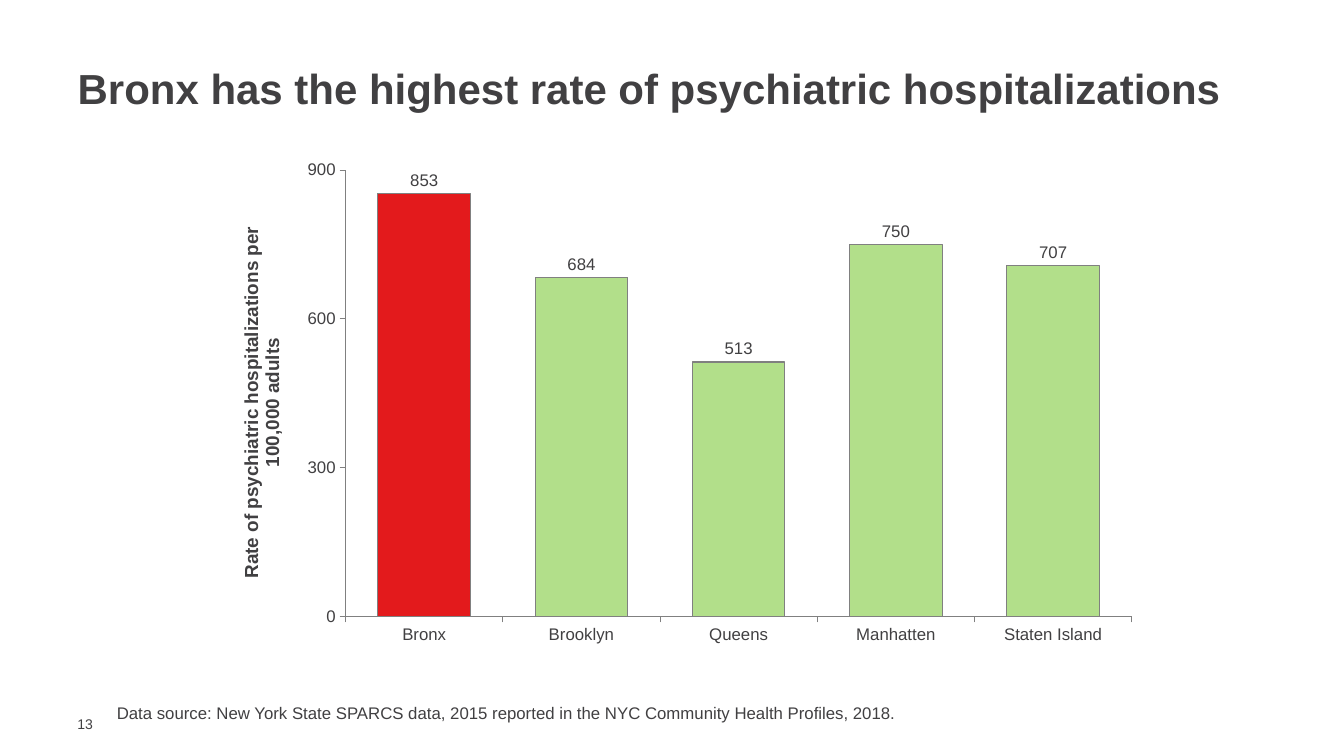
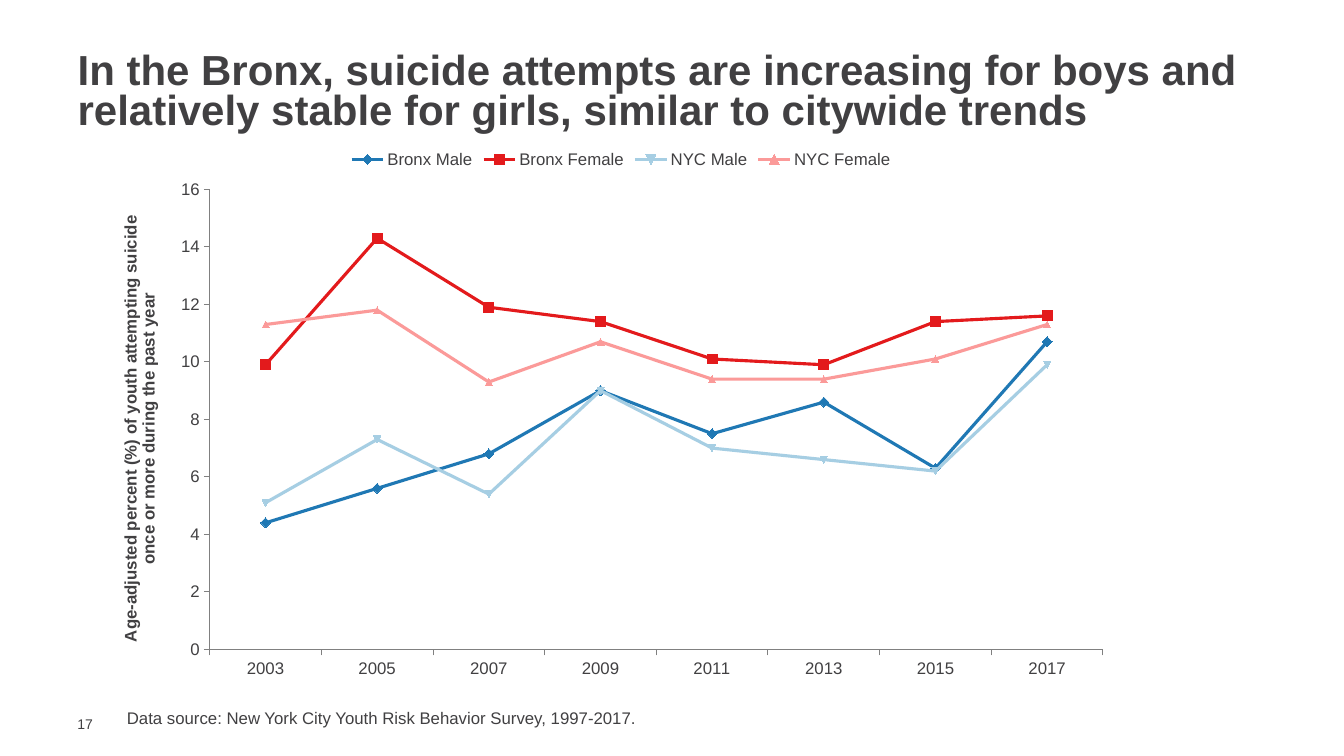
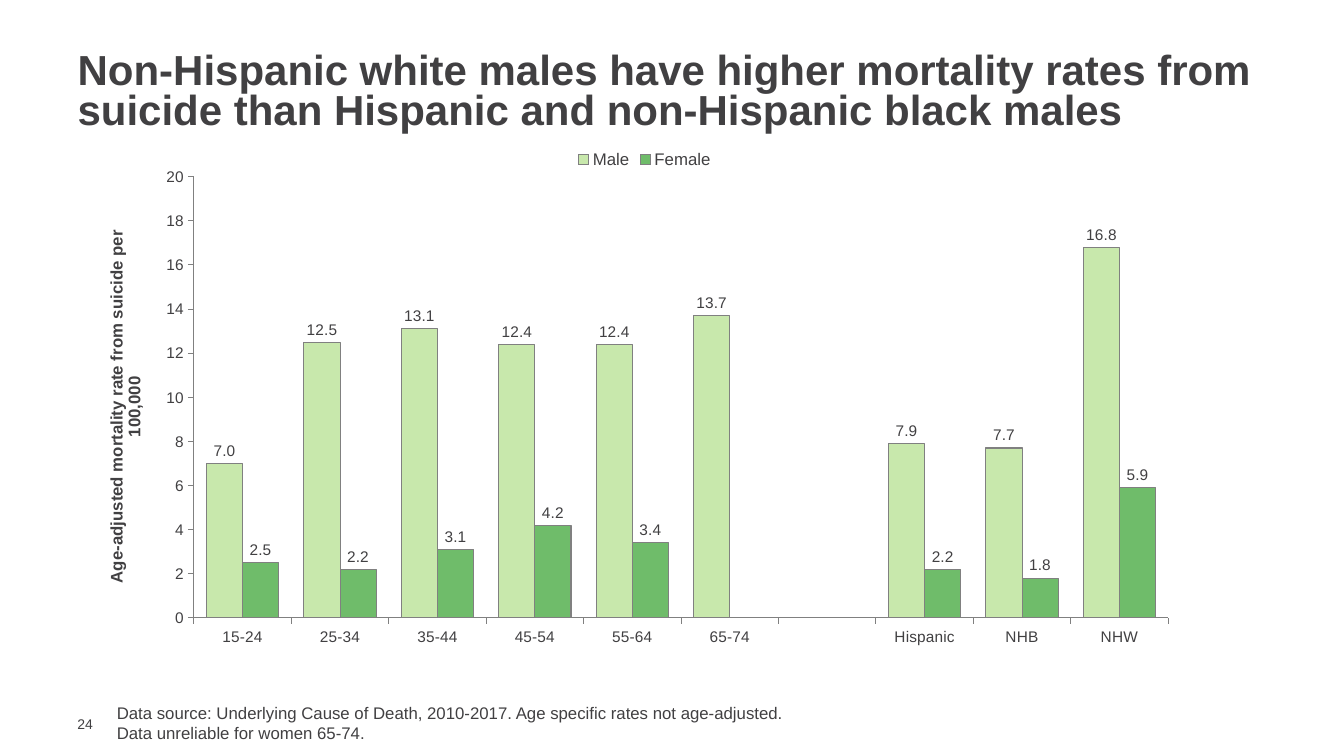
import pptx
import pptx.util
import pptx.chart.data
import pptx.dml.color
import pptx.enum.chart
import pptx.enum.text
import pptx.oxml
from pptx.util import Inches

RGB = pptx.dml.color.RGBColor
KIND = pptx.enum.chart.XL_CHART_TYPE
MARK = pptx.enum.chart.XL_MARKER_STYLE
FONT = "Arial"
INK = RGB(0x41, 0x40, 0x42)
GRAY = RGB(0x80, 0x80, 0x80)
RED = RGB(0xE3, 0x1A, 0x1C)
PINK = RGB(0xFB, 0x9A, 0x99)
BLUE = RGB(0x1F, 0x78, 0xB4)
SKY = RGB(0xA6, 0xCE, 0xE3)
LIME = RGB(0xB2, 0xDF, 0x8A)
GREEN = RGB(0x33, 0xA0, 0x2C)

# Content: series are (name, values, colour), lines add (marker, size)
SLIDES = [
    dict(
        title="Bronx has the highest rate of psychiatric hospitalizations",
        head=(0.67, 0.67, 12, 0.5), page="13",
        note=["Data source: New York State SPARCS data, 2015 reported in the "
              "NYC Community Health Profiles, 2018."],
        foot=(1.06, 6.92, 9.92, 0.3),
        kind=KIND.COLUMN_CLUSTERED, at=(2.16, 1.5, 9.25, 4.99),
        axis="Rate of psychiatric hospitalizations per 100,000 adults",
        size=13.5, tick=12, top=900, step=300, form="General",
        cats=["Bronx", "Brooklyn", "Queens", "Manhatten", "Staten Island"],
        series=[("Series 1", [853, 684, 513, 750, 707], LIME)],
        points={0: RED},
    ),
    dict(
        title="In the Bronx, suicide attempts are increasing for boys and "
              "relatively stable for girls, similar to citywide trends",
        head=(0.67, 0.47, 12, 0.91), page="17",
        note=["Data source: New York City Youth Risk Behavior Survey, 1997-2017."],
        foot=(1.16, 6.97, 9.71, 0.3),
        kind=KIND.LINE_MARKERS, at=(1.16, 1.38, 10, 5.37),
        plot=(0.092, 0.093, 0.886, 0.85),
        axis="Age-adjusted percent (%) of youth attempting suicide "
             "once or more during the past year",
        size=12, tick=12, top=16, step=2,
        cats=["2003", "2005", "2007", "2009", "2011", "2013", "2015", "2017"],
        series=[
            ("Bronx Male", [4.4, 5.6, 6.8, 9, 7.5, 8.6, 6.3, 10.7],
             BLUE, MARK.DIAMOND, 7),
            ("Bronx Female", [9.9, 14.3, 11.9, 11.4, 10.1, 9.9, 11.4, 11.6],
             RED, MARK.SQUARE, 7),
            ("NYC Male", [5.1, 7.3, 5.4, 9, 7, 6.6, 6.2, 9.9],
             SKY, MARK.AUTOMATIC, 5),
            ("NYC Female", [11.3, 11.8, 9.3, 10.7, 9.4, 9.4, 10.1, 11.3],
             PINK, MARK.AUTOMATIC, 5),
        ],
    ),
    dict(
        title="Non-Hispanic white males have higher mortality rates from "
              "suicide than Hispanic and non-Hispanic black males",
        head=(0.67, 0.47, 12, 0.91), page="24",
        note=["Data source: Underlying Cause of Death, 2010-2017. "
              "Age specific rates not age-adjusted.",
              "Data unreliable for women 65-74."],
        foot=(1.06, 6.92, 9.92, 0.5),
        kind=KIND.COLUMN_CLUSTERED, at=(1.02, 1.38, 10.75, 5.13),
        plot=(0.084, 0.073, 0.899, 0.853),
        axis="Age-adjusted mortality rate from suicide per 100,000",
        size=12, tick=11, top=20, step=2, form="0.0", alpha=70,
        cats=["15-24", "25-34", "35-44", "45-54", "55-64", "65-74", "",
              "Hispanic", "NHB", "NHW"],
        series=[
            ("Male", [7, 12.5, 13.1, 12.4, 12.4, 13.7, None, 7.9, 7.7, 16.8], LIME),
            ("Female", [2.5, 2.2, 3.1, 4.2, 3.4, None, None, 2.2, 1.8, 5.9], GREEN),
        ],
    ),
]


def style(font, size, bold=False):
    font.name, font.size, font.bold = FONT, pptx.util.Pt(size), bold
    font.color.rgb = INK


def outline(line, color, width):
    line.color.rgb = color
    line.width = pptx.util.Pt(width)


def write(frame, lines, size, bold=False):
    frame.word_wrap = True
    frame.auto_size = pptx.enum.text.MSO_AUTO_SIZE.SHAPE_TO_FIT_TEXT
    for i, text in enumerate(lines):
        para = frame.add_paragraph() if i else frame.paragraphs[0]
        para.alignment = pptx.enum.text.PP_ALIGN.LEFT
        run = para.add_run()
        run.text = text
        style(run.font, size, bold)


def add_text(slide, at, lines, size):
    frame = slide.shapes.add_textbox(*map(Inches, at)).text_frame
    write(frame, lines, size)
    return frame


def add_frame(slide, item):
    # Title, source note and page number
    title = slide.shapes.title
    title.left, title.top, title.width, title.height = map(Inches, item["head"])
    write(title.text_frame, [item["title"]], 30, True)
    title.text_frame.vertical_anchor = pptx.enum.text.MSO_ANCHOR.MIDDLE
    title.text_frame.paragraphs[0].line_spacing = 0.8
    add_text(slide, item["foot"], item["note"], 12)
    page = add_text(slide, (0.67, 7.1, 0.43, 0.17), [item["page"]], 10)
    page.vertical_anchor = pptx.enum.text.MSO_ANCHOR.MIDDLE
    page.margin_left = Inches(0.1)
    page.margin_top = page.margin_right = page.margin_bottom = 0


def set_axes(chart, item):
    for axis in (chart.category_axis, chart.value_axis):
        axis.has_major_gridlines = False
        axis.major_tick_mark = pptx.enum.chart.XL_TICK_MARK.OUTSIDE
        axis.minor_tick_mark = pptx.enum.chart.XL_TICK_MARK.NONE
        style(axis.tick_labels.font, item["tick"])
        outline(axis.format.line, GRAY, 0.75)
    axis = chart.value_axis
    axis.minimum_scale, axis.maximum_scale = 0, item["top"]
    axis.major_unit = item["step"]
    axis.tick_labels.number_format = "General"
    axis.tick_labels.number_format_is_linked = False
    run = axis.axis_title.text_frame.paragraphs[0].add_run()
    run.text = item["axis"]
    style(run.font, item["size"], True)


def set_line(series, color, mark, size):
    series.smooth = False
    outline(series.format.line, color, 2.25)
    series.marker.style, series.marker.size = mark, size
    series.marker.format.fill.solid()
    series.marker.format.fill.fore_color.rgb = color
    series.marker.format.line.color.rgb = color


def set_bars(series, color, item):
    series.invert_if_negative = False
    parts = [(series, color)]
    parts += [(series.points[i], c) for i, c in item.get("points", {}).items()]
    for part, tint in parts:
        part.format.fill.solid()
        part.format.fill.fore_color.rgb = tint
        outline(part.format.line, GRAY, 0.75)
    labels = series.data_labels
    labels.show_value = True
    labels.position = pptx.enum.chart.XL_LABEL_POSITION.OUTSIDE_END
    labels.number_format = item["form"]
    labels.number_format_is_linked = False
    style(labels.font, item["tick"])


def set_plot(chart, place):
    # Fixed inner plot area, as fractions of the chart
    area = chart.element.xpath("c:chart/c:plotArea")[0]
    for old in area.xpath("c:layout"):
        area.remove(old)
    modes = '<c:layoutTarget val="inner"/><c:xMode val="edge"/><c:yMode val="edge"/>'
    sizes = "".join(f'<c:{k} val="{v}"/>' for k, v in zip("xywh", place))
    area.insert(0, pptx.oxml.parse_xml(
        '<c:layout xmlns:c="http://schemas.openxmlformats.org/drawingml/2006/chart">'
        f"<c:manualLayout>{modes}{sizes}</c:manualLayout></c:layout>"))


def set_alpha(chart, part):
    for color in chart.element.xpath(".//c:ser/c:spPr/a:solidFill/a:srgbClr"):
        color.append(pptx.oxml.parse_xml(
            '<a:alpha xmlns:a="http://schemas.openxmlformats.org/drawingml/2006/main"'
            f' val="{part * 1000}"/>'))


def add_graph(slide, item):
    data = pptx.chart.data.CategoryChartData()
    data.categories = item["cats"]
    for name, values, *_ in item["series"]:
        data.add_series(name, values)
    chart = slide.shapes.add_chart(
        item["kind"], *map(Inches, item["at"]), data).chart
    style(chart.font, 10)
    chart.has_title = False
    set_axes(chart, item)
    plot = chart.plots[0]
    plot.vary_by_categories = False
    bars = item["kind"] == KIND.COLUMN_CLUSTERED
    if bars:
        plot.gap_width, plot.overlap = 70, 0
    for series, (_, _, color, *mark) in zip(plot.series, item["series"]):
        if bars:
            set_bars(series, color, item)
        else:
            set_line(series, color, *mark)
    if "alpha" in item:
        # Only the fills: outlines stay opaque
        set_alpha(chart, item["alpha"])
    if "plot" in item:
        set_plot(chart, item["plot"])
    chart.has_legend = len(item["series"]) > 1
    if chart.has_legend:
        chart.legend.position = pptx.enum.chart.XL_LEGEND_POSITION.TOP
        chart.legend.include_in_layout = False
        style(chart.legend.font, 12)


def main():
    deck = pptx.Presentation()
    deck.slide_width, deck.slide_height = Inches(13.33), Inches(7.5)
    for item in SLIDES:
        slide = deck.slides.add_slide(deck.slide_layouts[5])
        add_graph(slide, item)
        add_frame(slide, item)
    deck.save("out.pptx")


if __name__ == "__main__":
    main()
